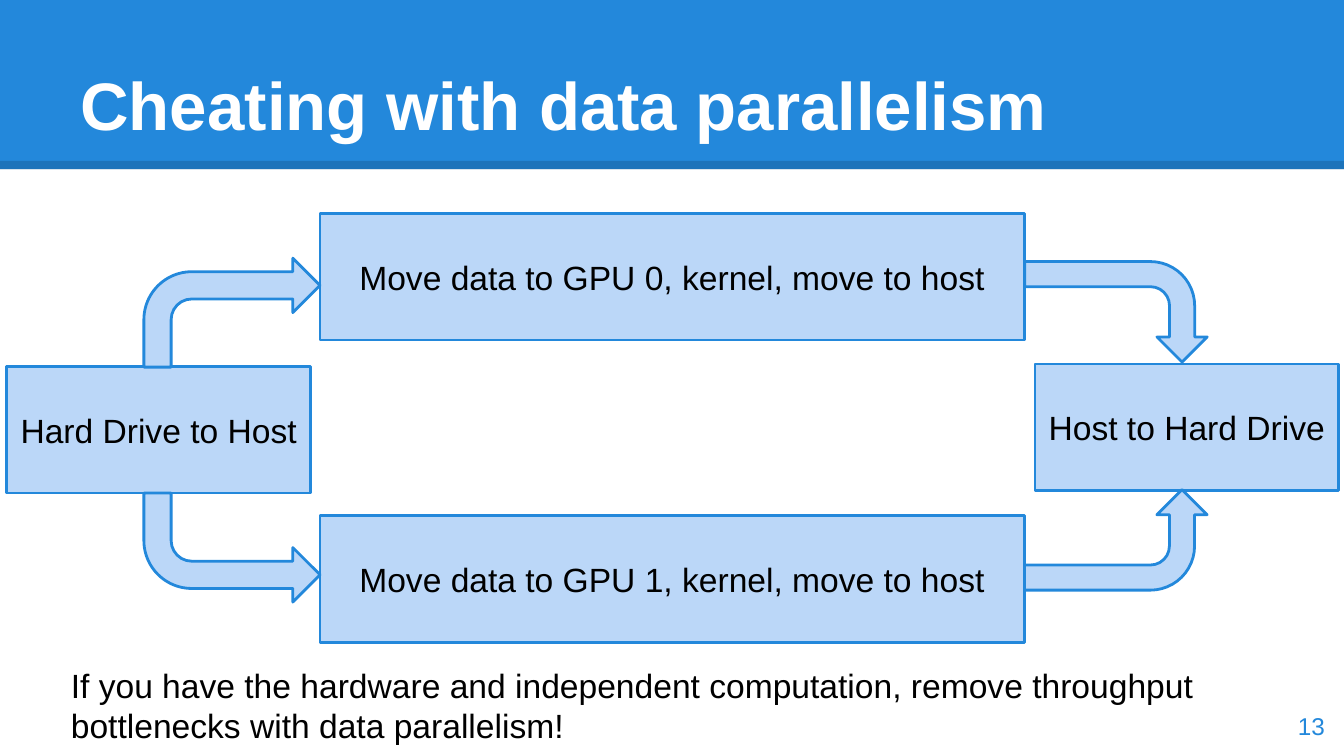
from pptx import Presentation
from pptx.dml.color import RGBColor
from pptx.enum.shapes import MSO_CONNECTOR, MSO_SHAPE
from pptx.enum.text import MSO_ANCHOR, MSO_AUTO_SIZE, PP_ALIGN
from pptx.oxml.ns import qn
from pptx.util import Cm, Pt
from lxml.etree import SubElement

COLORS = {"blue": "2388DB", "pale": "BBD7F8", "black": "000000", "white": "FFFFFF"}
FONT = "Arial"
SLIDE_WIDTH, SLIDE_HEIGHT = 25.4, 14.29
BOX_HEIGHT = 2.39


def color(name):
    return RGBColor.from_string(COLORS[name])


def lengths(*values):
    return [Cm(value) for value in values]


def write(frame, text, size, ink="black", align=PP_ALIGN.LEFT,
          anchor=MSO_ANCHOR.MIDDLE, wrap=True, bold=False):
    frame.auto_size = MSO_AUTO_SIZE.NONE
    frame.word_wrap = wrap
    frame.vertical_anchor = anchor
    frame.margin_left = frame.margin_right = Cm(0.25)
    frame.margin_top = frame.margin_bottom = Cm(0.25)
    paragraph = frame.paragraphs[0]
    paragraph.alignment = align
    run = paragraph.add_run()
    run.text = text
    run.font.name = FONT
    run.font.size = Pt(size)
    run.font.bold = bold
    run.font.color.rgb = color(ink)


def add_filled(slide, preset, place, fill, outlined=True):
    shape = slide.shapes.add_shape(preset, *lengths(*place))
    shape.shadow.inherit = False
    shape.fill.solid()
    shape.fill.fore_color.rgb = color(fill)
    if outlined:
        shape.line.color.rgb = color("blue")
        shape.line.width = Pt(1.5)
    else:
        shape.line.fill.background()
    return shape


def add_header(slide, text):
    add_filled(slide, MSO_SHAPE.RECTANGLE, (0, 0, SLIDE_WIDTH, 3.2), "blue", False)
    rule = slide.shapes.add_connector(
        MSO_CONNECTOR.STRAIGHT, *lengths(0, 3.12, SLIDE_WIDTH, 3.12))
    rule.line.width = Pt(4.5)
    rule.line.color.rgb = color("black")
    properties = rule._element.spPr
    SubElement(next(properties.iter(qn("a:srgbClr"))), qn("a:alpha"), val="15000")
    SubElement(properties, qn("a:effectLst"))

    title = slide.shapes.title
    title.left, title.top, title.width, title.height = lengths(1.27, 0.58, 22.86, 2.39)
    write(title.text_frame, text, 36, "white", anchor=MSO_ANCHOR.BOTTOM, bold=True)
    # The placeholder comes first in the tree; bring it in front of the band.
    slide.shapes._spTree.append(title._element)


def add_step(slide, text, left, top, width):
    step = add_filled(slide, MSO_SHAPE.RECTANGLE,
                      (left, top, width, BOX_HEIGHT), "pale")
    write(step.text_frame, text, 18, align=PP_ALIGN.CENTER, wrap=False)


def add_bent_arrow(slide, place, rotation=0, flipped=False):
    arrow = add_filled(slide, MSO_SHAPE.BENT_ARROW, place, "pale")
    for index, value in enumerate((0.25, 0.25, 0.25, 0.44)):
        arrow.adjustments[index] = value
    arrow.rotation = rotation
    if flipped:
        arrow._element.spPr.find(qn("a:xfrm")).set("flipH", "1")


def add_label(slide, text, place, size, **style):
    label = slide.shapes.add_textbox(*lengths(*place))
    write(label.text_frame, text, size, **style)


def main():
    deck = Presentation()
    deck.slide_width, deck.slide_height = lengths(SLIDE_WIDTH, SLIDE_HEIGHT)
    slide = deck.slides.add_slide(deck.slide_layouts[5])

    add_header(slide, "Cheating with data parallelism")
    add_label(slide, "13", (23.77, 13.18, 1.52, 1.09), 13,
              ink="blue", align=PP_ALIGN.RIGHT)

    add_step(slide, "Hard Drive to Host", 0.13, 6.93, 5.74)
    for gpu, top in enumerate((4.04, 9.75)):
        add_step(slide, f"Move data to GPU {gpu}, kernel, move to host",
                 6.05, top, 13.31)
    add_step(slide, "Host to Hard Drive", 19.56, 6.88, 5.74)

    for top, rotation, flipped in ((4.88, 0, False), (9.32, 180, True)):
        add_bent_arrow(slide, (2.72, top, 3.33, 2.06), rotation, flipped)
    for top, flipped in ((4.17, False), (8.48, True)):
        add_bent_arrow(slide, (20.14, top, 1.9, 3.45), 90, flipped)

    add_label(slide, "If you have the hardware and independent computation, "
              "remove throughput bottlenecks with data parallelism!",
              (1.09, 12.32, 22.86, 1.9), 18, anchor=MSO_ANCHOR.TOP)
    deck.save("out.pptx")


if __name__ == "__main__":
    main()
